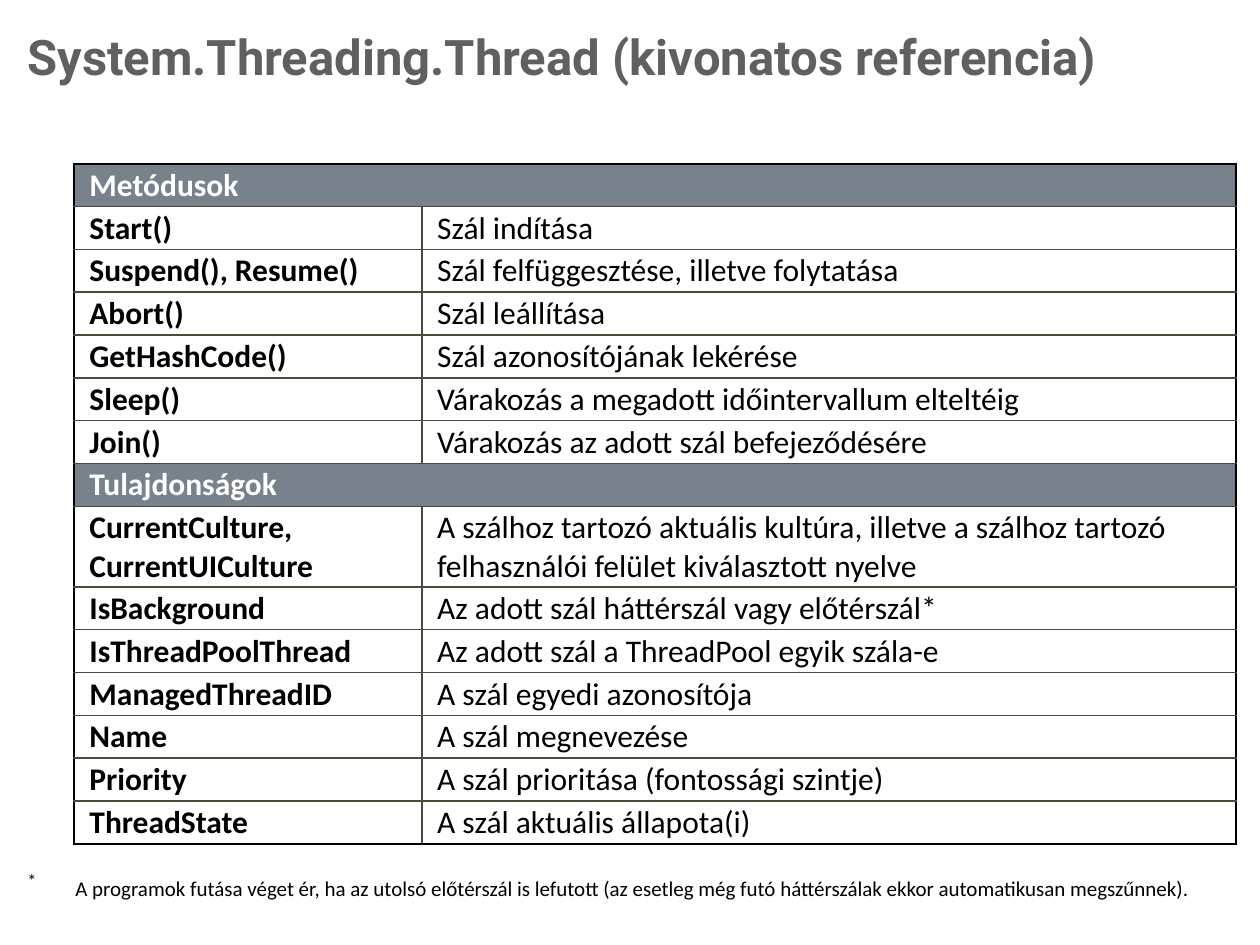
"""Build a one-slide reference table of the System.Threading.Thread members."""
import pptx
import pptx.dml.color
import pptx.enum.text
import pptx.oxml
import pptx.oxml.ns
import pptx.util

THEME = {
    "heading_font": "Roboto", "body_font": "Calibri",
    "heading": "606060", "text": "000000", "band_text": "FFFFFF",
    "band": "78828C", "frame": "000000", "rule": "4B4B36",
    "heading_size": 28, "body_size": 18, "note_size": 12,
    "frame_width": 1.5, "rule_width": 1,
}
MEMBERS = [
    ("Metódusok", None),
    ("Start()", "Szál indítása"),
    ("Suspend(), Resume()", "Szál felfüggesztése, illetve folytatása"),
    ("Abort()", "Szál leállítása"),
    ("GetHashCode()", "Szál azonosítójának lekérése"),
    ("Sleep()", "Várakozás a megadott időintervallum elteltéig"),
    ("Join()", "Várakozás az adott szál befejeződésére"),
    ("Tulajdonságok", None),
    ("CurrentCulture, CurrentUICulture",
     "A szálhoz tartozó aktuális kultúra, illetve a szálhoz tartozó "
     "felhasználói felület kiválasztott nyelve"),
    ("IsBackground", "Az adott szál háttérszál vagy előtérszál*"),
    ("IsThreadPoolThread", "Az adott szál a ThreadPool egyik szála-e"),
    ("ManagedThreadID", "A szál egyedi azonosítója"),
    ("Name", "A szál megnevezése"),
    ("Priority", "A szál prioritása (fontossági szintje)"),
    ("ThreadState", "A szál aktuális állapota(i)"),
]


def write(paragraph, text, font="body_font", size="body_size", color="text", bold=False, raised=0):
    run = paragraph.add_run()
    run.text = text
    run.font.name = THEME[font]
    run.font.size = pptx.util.Pt(THEME[size])
    run.font.color.rgb = pptx.dml.color.RGBColor.from_string(THEME[color])
    run.font.bold = bold
    if raised:
        run.font._element.set("baseline", str(raised * 1000))


def draw_edge(cell, side, kind):
    width = pptx.util.Pt(THEME[kind + "_width"])
    cell._tc.get_or_add_tcPr().append(pptx.oxml.parse_xml(
        f'<a:ln{side} {pptx.oxml.ns.nsdecls("a")} w="{width}"><a:solidFill>'
        f'<a:srgbClr val="{THEME[kind]}"/></a:solidFill></a:ln{side}>'))


deck = pptx.Presentation()
deck.slide_width, deck.slide_height = pptx.util.Inches(10), pptx.util.Inches(7.5)
slide = deck.slides.add_slide(deck.slide_layouts[6])

margin = pptx.util.Inches(0.12)
text_width = deck.slide_width - 2 * margin
row_height = pptx.util.Inches(0.34)
tall_row_height = pptx.util.Inches(0.64)
column_widths = [pptx.util.Inches(2.76), pptx.util.Inches(6.46)]

heading = slide.shapes.add_textbox(margin, pptx.util.Inches(0.13), text_width, pptx.util.Inches(0.63)).text_frame
heading.word_wrap = True
heading.vertical_anchor = pptx.enum.text.MSO_ANCHOR.MIDDLE
write(heading.paragraphs[0], "System.Threading.Thread (kivonatos referencia)",
      font="heading_font", size="heading_size", color="heading", bold=True)

reference = slide.shapes.add_table(
    len(MEMBERS), 2, pptx.util.Inches(0.59), pptx.util.Inches(1.3), sum(column_widths),
    row_height * (len(MEMBERS) - 1) + tall_row_height).table
reference.first_row = reference.horz_banding = False
for column, width in zip(reference.columns, column_widths):
    column.width = width

last = len(MEMBERS) - 1
for index, (member, meaning) in enumerate(MEMBERS):
    is_band = meaning is None
    reference.rows[index].height = tall_row_height if "CurrentCulture" in member else row_height
    if is_band:
        reference.cell(index, 0).merge(reference.cell(index, 1))
    for position, text in enumerate((member, meaning)):
        cell = reference.cell(index, position)
        cell.vertical_anchor = pptx.enum.text.MSO_ANCHOR.MIDDLE
        cell.margin_left, cell.margin_right = margin, 0
        cell.margin_top = cell.margin_bottom = pptx.util.Inches(0.02)
        on_frame = {"L": position == 0, "R": position == 1 or is_band,
                    "T": index == 0, "B": index == last}
        for side, outer in on_frame.items():
            draw_edge(cell, side, "frame" if outer else "rule")
        if is_band:
            cell.fill.solid()
            cell.fill.fore_color.rgb = pptx.dml.color.RGBColor.from_string(THEME["band"])
        else:
            cell.fill.background()
        if text:
            write(cell.text_frame.paragraphs[0], text, bold=position == 0,
                  color="band_text" if is_band else "text")

footnote = slide.shapes.add_textbox(margin, pptx.util.Inches(6.82), text_width, pptx.util.Inches(0.24)).text_frame
footnote.word_wrap = True
note = footnote.paragraphs[0]
hanging = pptx.util.Inches(0.38)
note_properties = note._p.get_or_add_pPr()
note_properties.set("marL", str(hanging))
note_properties.set("indent", str(-hanging))
write(note, "*\t", raised=30)
write(note, "A programok futása véget ér, ha az utolsó előtérszál is lefutott "
      "(az esetleg még futó háttérszálak ekkor automatikusan megszűnnek).", size="note_size")

deck.save("out.pptx")
